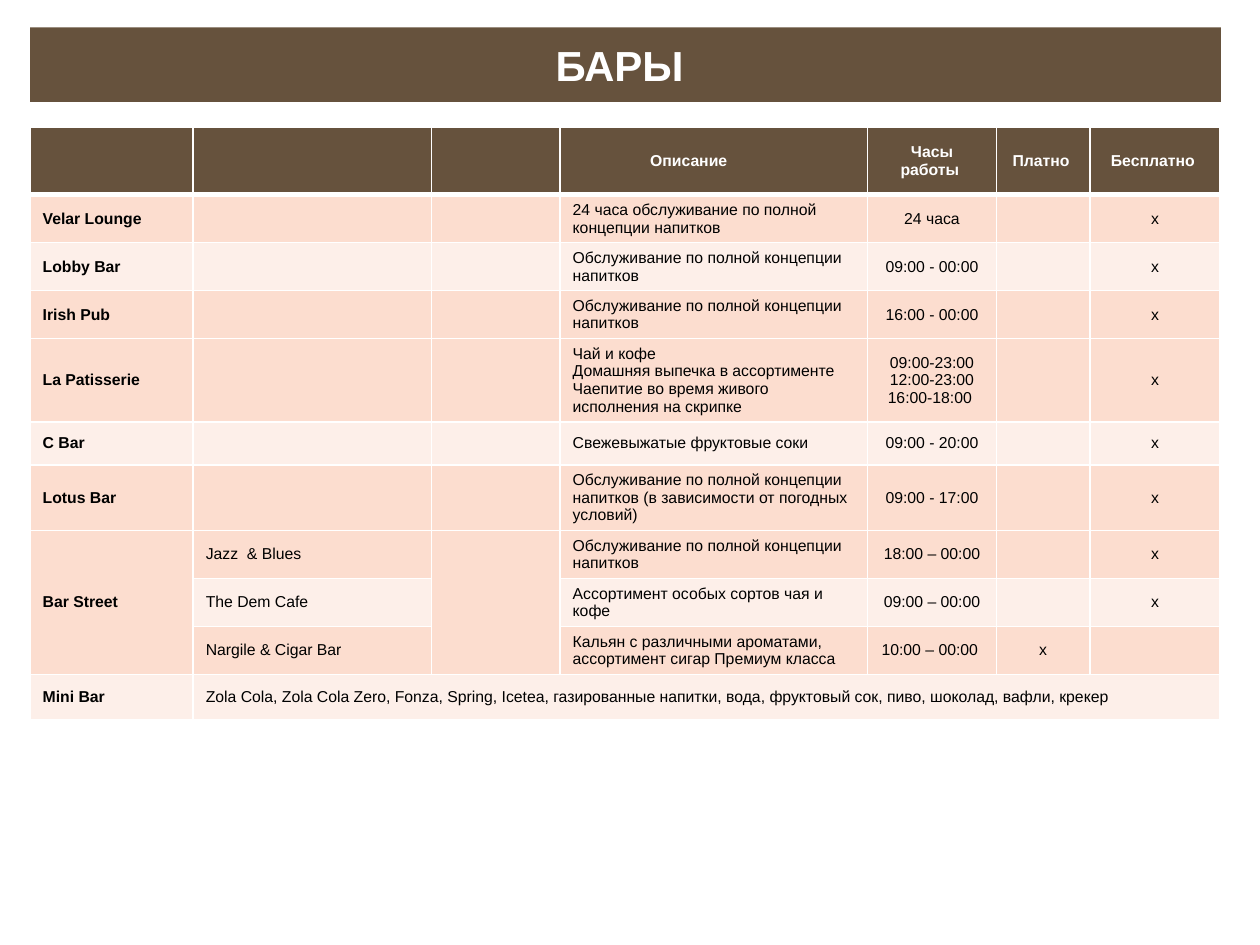
from lxml import etree
from pptx import Presentation
from pptx.dml.color import RGBColor
from pptx.enum.text import MSO_ANCHOR, PP_ALIGN
from pptx.oxml.ns import qn
from pptx.util import Pt

HUES = {"brown": "66523D", "peach": "FCDDCF", "pale": "FDEFE9",
        "white": "FFFFFF", "black": "000000"}
FONT, SIZE = "Arial", 9
LEFT, WIDTH = 17.2, 680.4

TITLE = "БАРЫ "
HEAD = ["", "", "", "Описание", "Часы работы ", "Платно ", "Бесплатно "]
FULL = "Oбслуживание по полной концепции напитков"
# bar, venue, description, hours, paid, free, fill, row height
BARS = [
    ("Velar Lounge", "", "24 часа обслуживание по полной концепции напитков",
     "24 часа", "", "x", "peach", 24.5),
    ("Lobby Bar", "", FULL, "09:00 - 00:00", "", "x", "pale", 25),
    ("Irish Pub", "", FULL, "16:00 - 00:00", "", "x", "peach", 24.5),
    ("La Patisserie", "",
     "Чай и кофе\nДомашняя выпечка в ассортименте\n"
     "Чаепитие во время живого исполнения на скрипке",
     "09:00-23:00\n12:00-23:00\n16:00-18:00 ", "", "x", "peach", 34),
    ("C Bar", "", "Cвежевыжатые фруктовые соки",
     "09:00 - 20:00", "", "x", "pale", 24.5),
    ("Lotus Bar", "", FULL + " (в зависимости от погодных условий)",
     "09:00 - 17:00", "", "x", "peach", 34),
    ("Bar Street", "Jazz  & Blues", FULL,
     "18:00 – 00:00", "", "x", "peach", 9.4),
    ("", "The Dem Cafe", "Ассортимент особых сортов чая и кофе",
     "09:00 – 00:00", "", "x", "pale", 9.4),
    ("", "Nargile & Cigar Bar",
     "Кальян с различными ароматами, ассортимент сигар Премиум класса",
     "10:00 – 00:00 ", "x", "", "peach", 9.4),
    ("Mini Bar", "Zola Cola, Zola Cola Zero, Fonza, Spring, Icetea, "
     "газированные напитки, вода, фруктовый сок, пиво, шоколад, вафли, крекер",
     "", "", "", "", "pale", 26),
]
COLS = [93.2, 136.3, 73.4, 175.7, 73.6, 53.5, 74.3]
HEAD_H = 38.5
MERGES = [(7, 0, 9, 0), (7, 2, 9, 2), (10, 1, 10, 6)]


def paint(fill, hue):
    fill.solid()
    fill.fore_color.rgb = RGBColor.from_string(HUES[hue])


def write(par, words, size, hue, bold, align):
    par.alignment = align
    if not words:
        # an empty cell keeps the small size so that its row stays low
        etree.SubElement(par._p, qn("a:endParaRPr"), sz=str(size * 100))
        return
    run = par.add_run()
    run.text = words
    font = run.font
    font.name, font.size, font.bold = FONT, Pt(size), bold
    font.color.rgb = RGBColor.from_string(HUES[hue])


def edge(cell, sides):
    props = cell._tc.get_or_add_tcPr()
    for spot, (side, wide) in enumerate(sides.items()):
        line = etree.Element(qn("a:ln" + side), w=str(Pt(wide)))
        fill = etree.SubElement(line, qn("a:solidFill"))
        etree.SubElement(fill, qn("a:srgbClr"), val=HUES["white"])
        props.insert(spot, line)


deck = Presentation()
deck.slide_width, deck.slide_height = Pt(720), Pt(540)
slide = deck.slides.add_slide(deck.slide_layouts[5])

# Title band
title = slide.shapes.title
title.left, title.top = Pt(LEFT), Pt(15.6)
title.width, title.height = Pt(WIDTH), Pt(42.7)
paint(title.fill, "brown")
title.text_frame.vertical_anchor = MSO_ANCHOR.MIDDLE
write(title.text_frame.paragraphs[0], TITLE, 24, "white", True, PP_ALIGN.CENTER)

# Table grid
highs = [HEAD_H] + [bar[-1] for bar in BARS]
table = slide.shapes.add_table(len(highs), len(COLS), Pt(LEFT), Pt(72.8),
                               Pt(WIDTH), Pt(sum(highs))).table
table.horz_banding = False
for col, wide in zip(table.columns, COLS):
    col.width = Pt(wide)
for row, high in zip(table.rows, highs):
    row.height = Pt(high)

# Cells: the third column is always blank
rows = [(HEAD, "brown")]
rows += [([bar[0], bar[1], "", *bar[2:6]], bar[6]) for bar in BARS]
for r, (texts, hue) in enumerate(rows):
    for c, words in enumerate(texts):
        cell = table.cell(r, c)
        cell.vertical_anchor = MSO_ANCHOR.MIDDLE
        paint(cell.fill, hue)
        edge(cell, {"L": 1, "R": 1, "T": 3 if r == 1 else 1,
                    "B": 3 if r == 0 else 1})
        align = PP_ALIGN.CENTER if r == 0 or c > 3 else PP_ALIGN.LEFT
        frame = cell.text_frame
        for n, part in enumerate(words.split("\n")):
            par = frame.add_paragraph() if n else frame.paragraphs[0]
            write(par, part, SIZE, "black" if r else "white",
                  r == 0 or c == 0, align)

table.cell(0, 3).margin_right = Pt(36)
for top, left, low, right in MERGES:
    table.cell(top, left).merge(table.cell(low, right))

deck.save("out.pptx")
